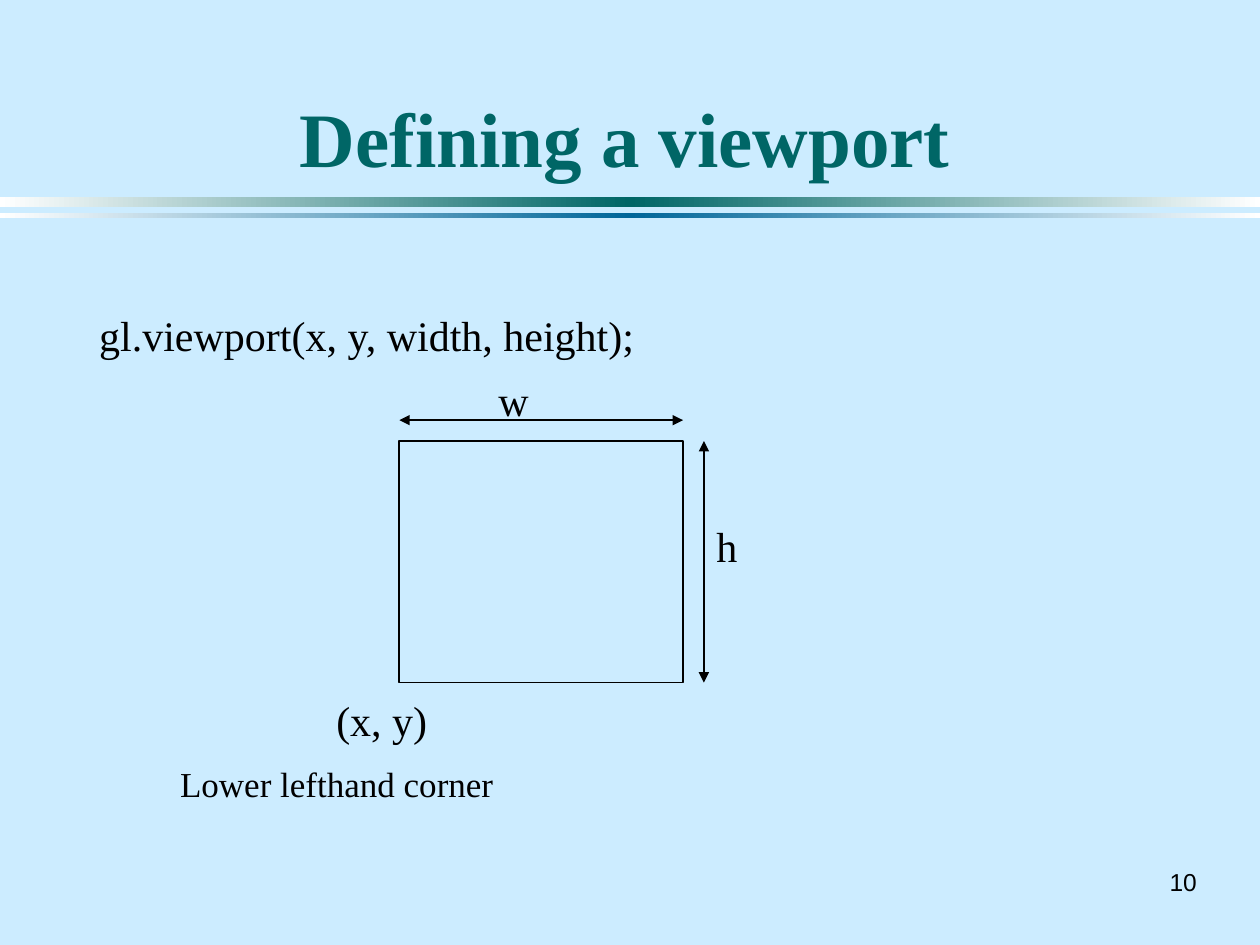
from copy import deepcopy

from lxml.etree import SubElement
from pptx import Presentation
from pptx.dml.color import RGBColor
from pptx.enum.shapes import MSO_CONNECTOR as Link, MSO_SHAPE as Shape
from pptx.enum.text import MSO_ANCHOR as Anchor, MSO_AUTO_SIZE as Fit, PP_ALIGN as Align
from pptx.oxml.ns import qn
from pptx.util import Cm, Pt

COLORS = {"sky": "CCECFF", "teal": "006666", "blue": "006699",
          "fade": "FFFFFF", "ink": "000000"}


def color(name):
    return RGBColor.from_string(COLORS[name])


class Board:
    """Style of the page and the page being drawn."""
    text_style = {"name": "Times New Roman", "size": Pt(24), "bold": False}
    line_width = Pt(1)

    def __init__(self, page):
        self.page = page
        page.background.fill.solid()
        page.background.fill.fore_color.rgb = color("sky")

    def set_text(self, frame, words, align=Align.LEFT, ink="ink", **style):
        frame.text = words
        para = frame.paragraphs[0]
        para.alignment = align
        span = para.runs[0]
        for key, value in {**self.text_style, **style}.items():
            setattr(span.font, key, value)
        span.font.color.rgb = color(ink)

    def title(self, words, *place):
        box = self.page.shapes.title
        box.left, box.top, box.width, box.height = map(Cm, place)
        frame = box.text_frame
        for key, value in {"vertical_anchor": Anchor.BOTTOM, "word_wrap": True,
                           "auto_size": Fit.NONE}.items():
            setattr(frame, key, value)
        self.set_text(frame, words, Align.CENTER, "teal", size=Pt(44), bold=True)

    def label(self, words, *place, wrap=True, anchor=Anchor.TOP, **style):
        frame = self.page.shapes.add_textbox(*map(Cm, place)).text_frame
        frame.word_wrap = wrap
        frame.vertical_anchor = anchor
        self.set_text(frame, words, **style)

    def rectangle(self, *place):
        box = self.page.shapes.add_shape(Shape.RECTANGLE, *map(Cm, place))
        box.shadow.inherit = False
        return box

    def band(self, middle, *place):
        """Bar that fades from its middle colour to both ends."""
        box = self.rectangle(*place)
        box.line.fill.background()
        box.fill.gradient()
        box.fill.gradient_angle = 0
        stops = box._element.spPr.find(".//" + qn("a:gsLst"))
        stops.append(deepcopy(stops[0]))
        for stop, name, position in zip(box.fill.gradient_stops,
                                        ("fade", middle, "fade"), (0, 0.5, 1)):
            stop.color.rgb = color(name)
            stop.position = position

    def outline(self, *place):
        box = self.rectangle(*place)
        box.fill.background()
        self.stroke(box.line)

    def stroke(self, line):
        line.color.rgb = color("ink")
        line.width = self.line_width

    def double_arrow(self, *ends):
        arrow = self.page.shapes.add_connector(Link.STRAIGHT, *map(Cm, ends))
        self.stroke(arrow.line)
        line = arrow._element.spPr.find(qn("a:ln"))
        for end in ("a:headEnd", "a:tailEnd"):
            SubElement(line, qn(end), type="triangle")
        SubElement(arrow._element.spPr, qn("a:effectLst"))


def main():
    deck = Presentation()
    deck.slide_width, deck.slide_height = Cm(25.4), Cm(19.05)
    board = Board(deck.slides.add_slide(deck.slide_layouts[5]))

    board.band("teal", 0, 3.97, 25.4, 0.2)
    board.band("blue", 0, 4.29, 25.4, 0.1)
    board.title("Defining a viewport", 1.7, 0.64, 21.8, 3.18)
    board.label("gl.viewport(x, y, width, height);", 1.75, 6.12, 22.58, 1.27)

    left, top, width, height = 8.05, 8.89, 5.72, 4.87
    right, bottom, gap = left + width, top + height, 0.42
    board.outline(left, top, width, height)
    board.double_arrow(right + gap, top, right + gap, bottom)
    board.double_arrow(left, top - gap, right, top - gap)

    board.label("w", 9.8, 7.42, 1.22, 1.27)
    board.label("h", right + gap, 10.37, 1.22, 1.27)
    board.label("(x, y)", 6.53, 13.87, 2.34, 1.27, wrap=False)
    board.label("Lower lefthand corner", 3.38, 15.24, 7.14, 1.09, size=Pt(20))
    board.label("10", 23.29, 17.35, 1.09, 0.84, wrap=False, anchor=Anchor.MIDDLE,
                align=Align.RIGHT, name="Arial", size=Pt(14))

    deck.save("out.pptx")


if __name__ == "__main__":
    main()
